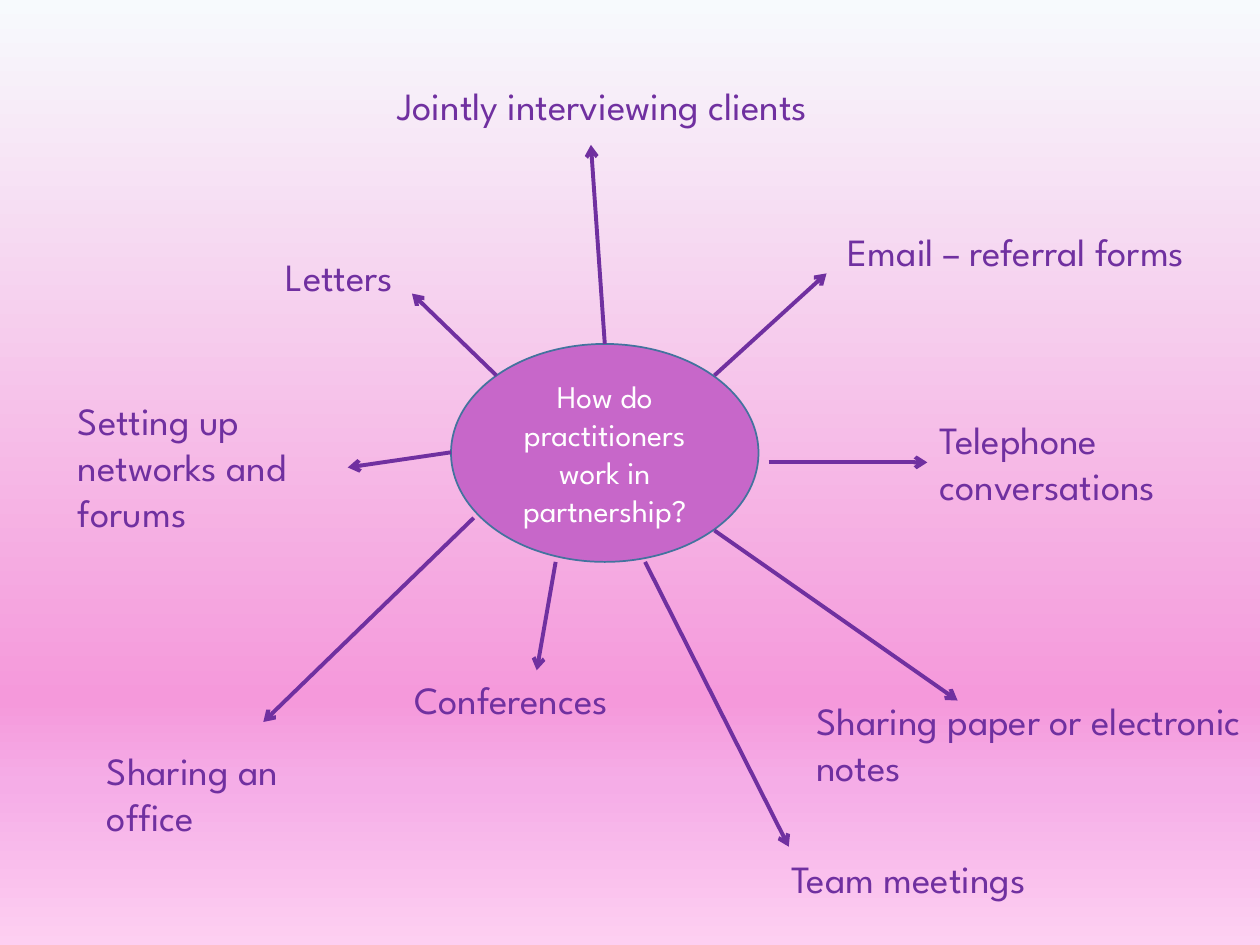
import pptx
import pptx.dml.color
import pptx.enum.shapes
import pptx.enum.text
import pptx.oxml.ns
import pptx.util
from lxml import etree
from pptx.util import Inches

FONT = "League Spartan"
PURPLE = "7030A0"
BACKGROUND_STOPS = [(0, "F7FAFD"), (74, "F599DB"), (83, "F5ADE7"), (100, "FDCFF1")]
HUB_BOX = (3.58, 2.73, 2.44, 1.73)

# Label, its box, whether it wraps, and the start and end of its arrow
METHODS = [
    ("Email – referral forms", (6.63, 1.76, 3.25, 0.47), False, (5.67, 2.98), (6.56, 2.17)),
    ("Telephone conversations", (7.36, 3.25, 2.43, 0.84), True, (6.1, 3.67), (7.36, 3.67)),
    ("Jointly interviewing clients", (3.06, 0.6, 4.03, 0.47), False, (4.8, 2.73), (4.69, 1.15)),
    ("Letters", (2.17, 1.96, 1.18, 0.47), True, (3.94, 2.98), (3.27, 2.33)),
    ("Setting up networks and forums", (0.52, 3.1, 2.48, 1.21), True, (3.58, 3.59), (2.76, 3.71)),
    ("Conferences", (3.19, 5.32, 2.14, 0.47), False, (4.41, 4.46), (4.26, 5.32)),
    ("Team meetings", (6.18, 6.74, 2.49, 0.47), False, (5.12, 4.46), (6.26, 6.72)),
    ("Sharing paper or electronic notes", (6.38, 5.48, 3.62, 0.84), True, (5.67, 4.21), (7.6, 5.56)),
    ("Sharing an office", (0.75, 5.88, 2.01, 0.84), True, (3.76, 4.11), (2.09, 5.73)),
]


def color(hex_code):
    return pptx.dml.color.RGBColor.from_string(hex_code)


def add_child(parent, tag, **attributes):
    return etree.SubElement(parent, pptx.oxml.ns.qn(tag), **attributes)


def paint_background(slide):
    fill = slide.background.fill
    fill.gradient()
    fill.gradient_angle = 270
    stops = next(slide.element.iter(pptx.oxml.ns.qn("a:gsLst")))
    for default_stop in list(stops):
        stops.remove(default_stop)
    for percent, hex_code in BACKGROUND_STOPS:
        stop = add_child(stops, "a:gs", pos=str(percent * 1000))
        add_child(stop, "a:srgbClr", val=hex_code)


def write_text(frame, text, size, hex_code):
    frame.text = text
    font = frame.paragraphs[0].runs[0].font
    font.name = FONT
    font.size = pptx.util.Pt(size)
    font.color.rgb = color(hex_code)


def add_hub(slide, box, question):
    hub = slide.shapes.add_shape(pptx.enum.shapes.MSO_SHAPE.OVAL, *map(Inches, box))
    hub.shadow.inherit = False
    hub.fill.solid()
    hub.fill.fore_color.rgb = color("C767C9")
    hub.line.color.rgb = color("43739E")
    hub.line.width = pptx.util.Pt(1)
    frame = hub.text_frame
    frame.word_wrap = True
    frame.vertical_anchor = pptx.enum.text.MSO_ANCHOR.MIDDLE
    write_text(frame, question, 18, "FFFFFF")
    frame.paragraphs[0].alignment = pptx.enum.text.PP_ALIGN.CENTER


def add_arrow(slide, start, end):
    arrow = slide.shapes.add_connector(
        pptx.enum.shapes.MSO_CONNECTOR.STRAIGHT, *map(Inches, start + end)
    )
    arrow.line.color.rgb = color(PURPLE)
    arrow.line.width = pptx.util.Pt(2.25)
    add_child(arrow.line._get_or_add_ln(), "a:tailEnd", type="arrow")
    add_child(arrow._element.spPr, "a:effectLst")


def add_label(slide, box, text, wraps):
    frame = slide.shapes.add_textbox(*map(Inches, box)).text_frame
    frame.word_wrap = wraps
    frame.auto_size = pptx.enum.text.MSO_AUTO_SIZE.SHAPE_TO_FIT_TEXT
    write_text(frame, text, 22, PURPLE)


def main():
    deck = pptx.Presentation()
    deck.slide_width, deck.slide_height = Inches(10), Inches(7.5)
    slide = deck.slides.add_slide(deck.slide_layouts[6])
    paint_background(slide)
    add_hub(slide, HUB_BOX, "How do practitioners work in partnership?")
    for text, box, wraps, start, end in METHODS:
        add_arrow(slide, start, end)
        add_label(slide, box, text, wraps)
    deck.save("out.pptx")


if __name__ == "__main__":
    main()
